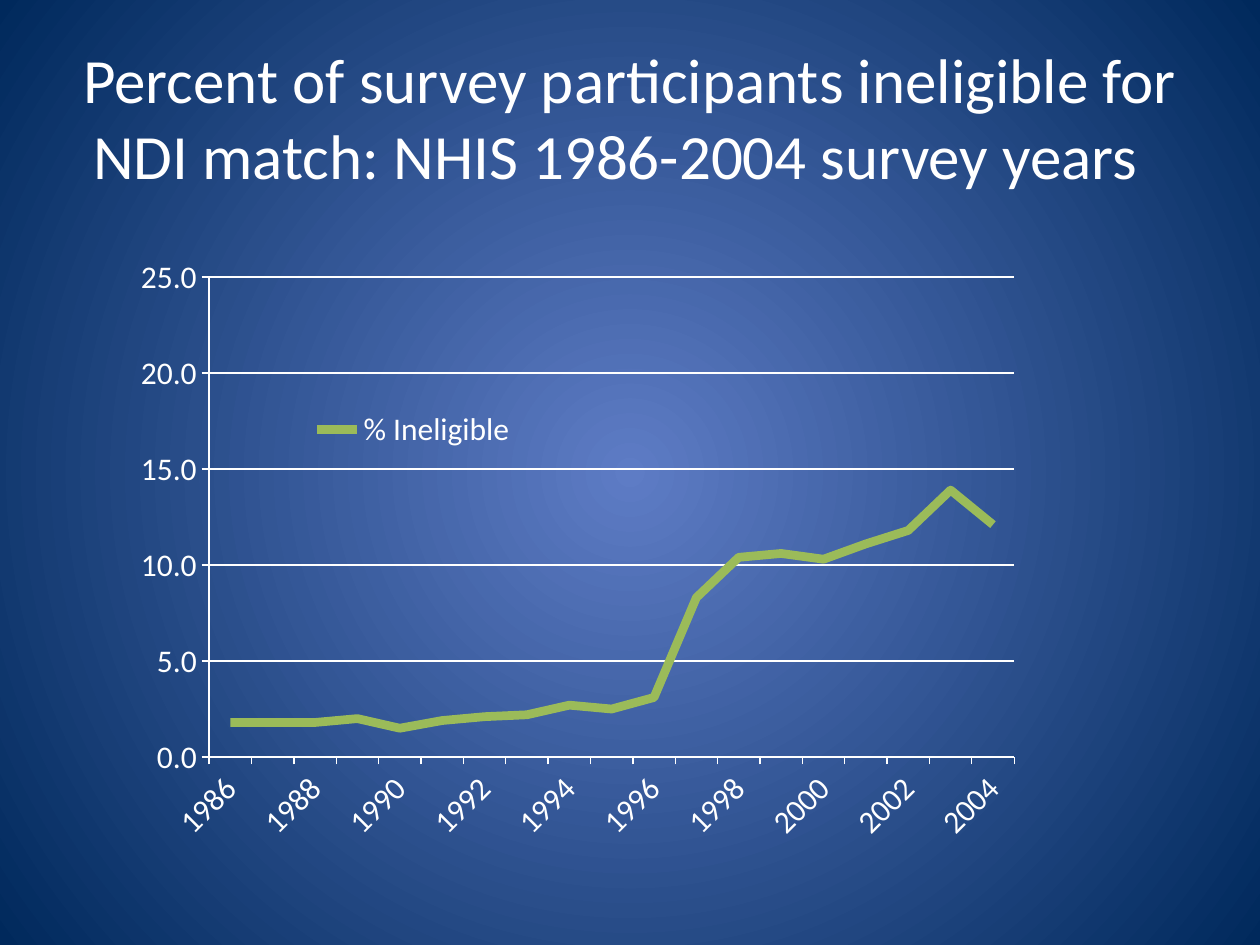
from dataclasses import dataclass

from lxml import etree
from pptx import Presentation
from pptx import util as u
from pptx.chart.data import CategoryChartData
from pptx.dml.color import RGBColor
from pptx.enum import chart as ch, text
from pptx.oxml.ns import qn


@dataclass(frozen=True)
class Theme:
    font: str = "Calibri"
    ink: RGBColor = RGBColor.from_string("FFFFFF")
    glow: RGBColor = RGBColor.from_string("5E7CC5")
    edge: RGBColor = RGBColor.from_string("00295C")
    series: RGBColor = RGBColor.from_string("9BBB59")
    title_size: u.Length = u.Pt(36)
    chart_size: u.Length = u.Pt(18)
    hairline: u.Length = u.Pt(0.75)
    series_line: u.Length = u.Pt(5)


THEME = Theme()
WIDTH, HEIGHT = u.Inches(10), u.Inches(7.5)
TITLE = "Percent of survey participants ineligible for NDI match: NHIS 1986-2004 survey years  "
YEARS = [str(year) for year in range(1986, 2005)]
INELIGIBLE = [1.8, 1.8, 1.8, 2, 1.5, 1.9, 2.1, 2.2, 2.7, 2.5,
              3.1, 8.3, 10.4, 10.6, 10.3, 11.1, 11.8, 13.9, 12.1]


def share(x, y, w, h):
    return [int(part) for part in (WIDTH * x, HEIGHT * y, WIDTH * w, HEIGHT * h)]


def style_font(font, size):
    font.name, font.size = THEME.font, size
    font.color.rgb = THEME.ink


def style_line(line, color, width):
    line.color.rgb, line.width = color, width


def set_radial_background(s):
    fill = s.background.fill
    fill.gradient()
    for stop, color in zip(fill.gradient_stops, (THEME.glow, THEME.edge)):
        stop.color.rgb = color
    for i, stop in enumerate(fill.gradient_stops):
        stop.position = i
    grad = s._element.find(".//" + qn("a:gradFill"))
    lin = grad.find(qn("a:lin"))
    circle = etree.Element(qn("a:path"), path="circle")
    etree.SubElement(circle, qn("a:fillToRect"),
                     {side: "50000" for side in "ltrb"})
    grad.replace(lin, circle)


def add_title(s, words, box):
    tf = s.shapes.add_textbox(*box).text_frame
    tf.word_wrap = True
    tf.vertical_anchor = text.MSO_ANCHOR.MIDDLE
    p = tf.paragraphs[0]
    p.text = words
    p.alignment = text.PP_ALIGN.CENTER
    style_font(p.font, THEME.title_size)


def set_layout(parent, before, x, y, w, h, inner=False):
    for old in parent.findall(qn("c:layout")):
        parent.remove(old)
    layout = etree.Element(qn("c:layout"))
    manual = etree.SubElement(layout, qn("c:manualLayout"))
    values = {"layoutTarget": "inner"} if inner else {}
    values.update(xMode="edge", yMode="edge", x=x, y=y, w=w, h=h)
    for tag, value in values.items():
        etree.SubElement(manual, qn("c:" + tag), val=str(value))
    parent.find(qn(before)).addprevious(layout)


def style_axes(chart):
    for axis in (chart.category_axis, chart.value_axis):
        axis.major_tick_mark = ch.XL_TICK_MARK.OUTSIDE
        style_line(axis.format.line, THEME.ink, THEME.hairline)
    years, percent = chart.category_axis, chart.value_axis
    years._element.get_or_add_txPr().bodyPr.set("rot", "-2700000")
    style_font(years.tick_labels.font, THEME.chart_size)
    skip = etree.Element(qn("c:tickLblSkip"), val="2")
    years._element.find(qn("c:noMultiLvlLbl")).addprevious(skip)
    percent.minimum_scale, percent.maximum_scale, percent.major_unit = 0, 25, 5
    percent.tick_labels.number_format = "0.0"
    percent.tick_labels.number_format_is_linked = False
    percent.has_major_gridlines = True
    style_line(percent.major_gridlines.format.line, THEME.ink, THEME.hairline)


def add_line_chart(s, name, cats, vals, box):
    data = CategoryChartData(number_format="0.0")
    data.categories = cats
    data.add_series(name, vals)
    chart = s.shapes.add_chart(ch.XL_CHART_TYPE.LINE, *box, data).chart
    style_font(chart.font, THEME.chart_size)
    chart.has_title = False
    plot = chart.plots[0]
    plot.vary_by_categories = False
    series = plot.series[0]
    series.smooth = False
    series.marker.style = ch.XL_MARKER_STYLE.NONE
    style_line(series.format.line, THEME.series, THEME.series_line)
    style_axes(chart)
    chart.has_legend = True
    chart.legend.position = ch.XL_LEGEND_POSITION.RIGHT
    chart.legend.include_in_layout = False
    set_layout(chart.legend._element, "c:overlay", 0.2, 0.25, 0.2, 0.07)
    area = chart._chartSpace.find(".//" + qn("c:plotArea"))
    set_layout(area, "c:lineChart", 0.12, 0.04, 0.71, 0.77, inner=True)


def main():
    prs = Presentation()
    prs.slide_width, prs.slide_height = WIDTH, HEIGHT
    s = prs.slides.add_slide(prs.slide_layouts[6])
    set_radial_background(s)
    add_title(s, TITLE, share(0.05, 0.04, 0.9, 1 / 6))
    add_line_chart(s, "% Ineligible", YEARS, INELIGIBLE,
                   share(0.058, 4 / 15, 0.9, 0.66))
    prs.save("out.pptx")


if __name__ == "__main__":
    main()
